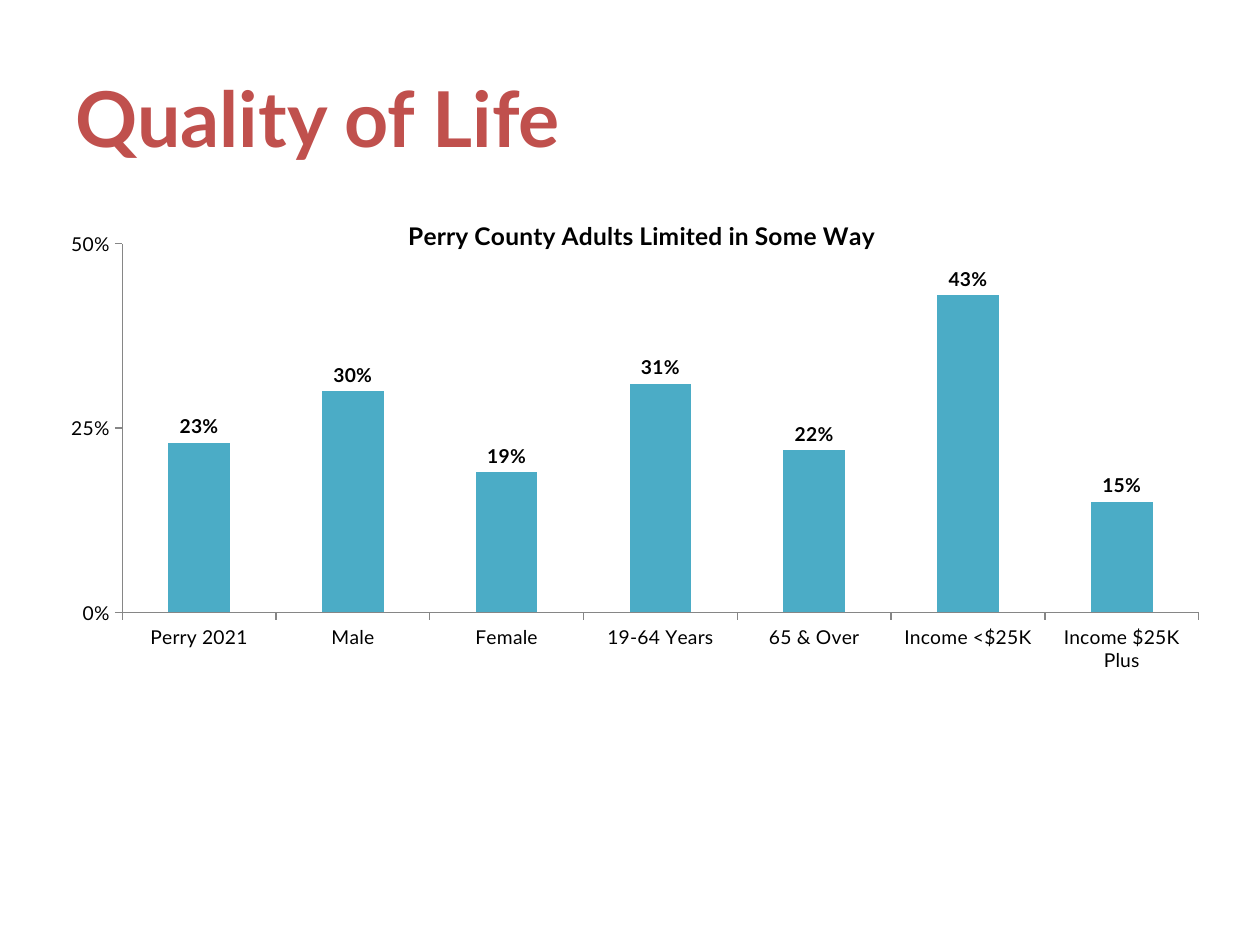
from lxml import etree
from pptx import Presentation
from pptx.chart.data import CategoryChartData
from pptx.dml.color import RGBColor
from pptx.enum import chart as ch, text
from pptx.oxml import parse_xml
from pptx.oxml.ns import nsdecls, qn
from pptx.util import Inches, Pt

RED = RGBColor(0xC0, 0x50, 0x4D)
TEAL = RGBColor(0x4B, 0xAC, 0xC6)
GRAY = RGBColor(0x86, 0x86, 0x86)
BLACK = RGBColor(0, 0, 0)
FONT = "Lato"
LIMITED_ADULTS = {
    "Perry 2021": 0.23,
    "Male": 0.30,
    "Female": 0.19,
    "19-64 Years": 0.31,
    "65 & Over": 0.22,
    "Income <$25K": 0.43,
    "Income $25K Plus": 0.15,
}


def set_values(target, **values):
    for name, value in values.items():
        setattr(target, name, value)


def style_font(font, size, color=BLACK, bold=False):
    set_values(font, name=FONT, size=Pt(size), bold=bold)
    font.color.rgb = color


def manual_layout(**places):
    """Make a layout element from edge modes and chart fractions."""
    layout = parse_xml(f"<c:layout {nsdecls('c')}><c:manualLayout/></c:layout>")
    for name, value in places.items():
        etree.SubElement(layout[0], qn(f"c:{name}")).set("val", str(value))
    return layout


def place_part(part, layout):
    """Replace the layout of a chart title or plot area."""
    old = part.find(qn("c:layout"))
    if old is not None:
        part.remove(old)
    text_part = part.find(qn("c:tx"))
    part.insert(0 if text_part is None else 1, layout)


def add_title(page, wording):
    title = page.shapes.title
    set_values(title, left=Inches(0.5), top=Inches(0.3),
               width=Inches(9), height=Inches(1.25))
    title.text_frame.text = wording
    title.text_frame.vertical_anchor = text.MSO_ANCHOR.MIDDLE
    para = title.text_frame.paragraphs[0]
    para.alignment = text.PP_ALIGN.LEFT
    style_font(para.runs[0].font, 44, RED, True)


def add_chart_title(chart, wording):
    chart.has_title = True
    title = chart.chart_title
    title.include_in_layout = False
    title.text_frame.text = wording
    style_font(title.text_frame.paragraphs[0].runs[0].font, 14, bold=True)
    place_part(title._element, manual_layout(xMode="edge", yMode="edge", x=0.3, y=0.03))


def style_axis(axis):
    set_values(axis, has_major_gridlines=False,
               major_tick_mark=ch.XL_TICK_MARK.OUTSIDE,
               minor_tick_mark=ch.XL_TICK_MARK.NONE)
    axis.format.line.color.rgb = GRAY
    axis.format.line.width = Pt(0.75)
    style_font(axis.tick_labels.font, 11)


def add_column_chart(page, wording, shares):
    chart_data = CategoryChartData(number_format="0%")
    chart_data.categories = list(shares)
    chart_data.add_series("Series 1", list(shares.values()))
    chart = page.shapes.add_chart(
        ch.XL_CHART_TYPE.COLUMN_CLUSTERED, Inches(0.48), Inches(1.58),
        Inches(9.08), Inches(3.75), chart_data).chart
    chart.has_legend = False
    style_font(chart.font, 10)
    add_chart_title(chart, wording)

    style_axis(chart.category_axis)
    chart.category_axis.tick_label_position = ch.XL_TICK_LABEL_POSITION.LOW
    style_axis(chart.value_axis)
    set_values(chart.value_axis, minimum_scale=0, maximum_scale=0.5, major_unit=0.25)
    set_values(chart.value_axis.tick_labels, number_format="0%",
               number_format_is_linked=False)

    plot = chart.plots[0]
    set_values(plot, gap_width=150, vary_by_categories=False, has_data_labels=True)
    set_values(plot.data_labels, show_value=True, number_format="0%",
               number_format_is_linked=False,
               position=ch.XL_LABEL_POSITION.OUTSIDE_END)
    style_font(plot.data_labels.font, 11, bold=True)
    fill = plot.series[0].format.fill
    fill.solid()
    fill.fore_color.rgb = TEAL
    place_part(chart._chartSpace.chart.plotArea, manual_layout(
        layoutTarget="inner", xMode="edge", yMode="edge",
        x=0.054, y=0.095, w=0.941, h=0.786))


def main():
    deck = Presentation()
    set_values(deck, slide_width=Inches(10), slide_height=Inches(7.5))
    page = deck.slides.add_slide(deck.slide_layouts[5])
    add_title(page, "Quality of Life")
    add_column_chart(page, "Perry County Adults Limited in Some Way", LIMITED_ADULTS)
    deck.save("out.pptx")


if __name__ == "__main__":
    main()
